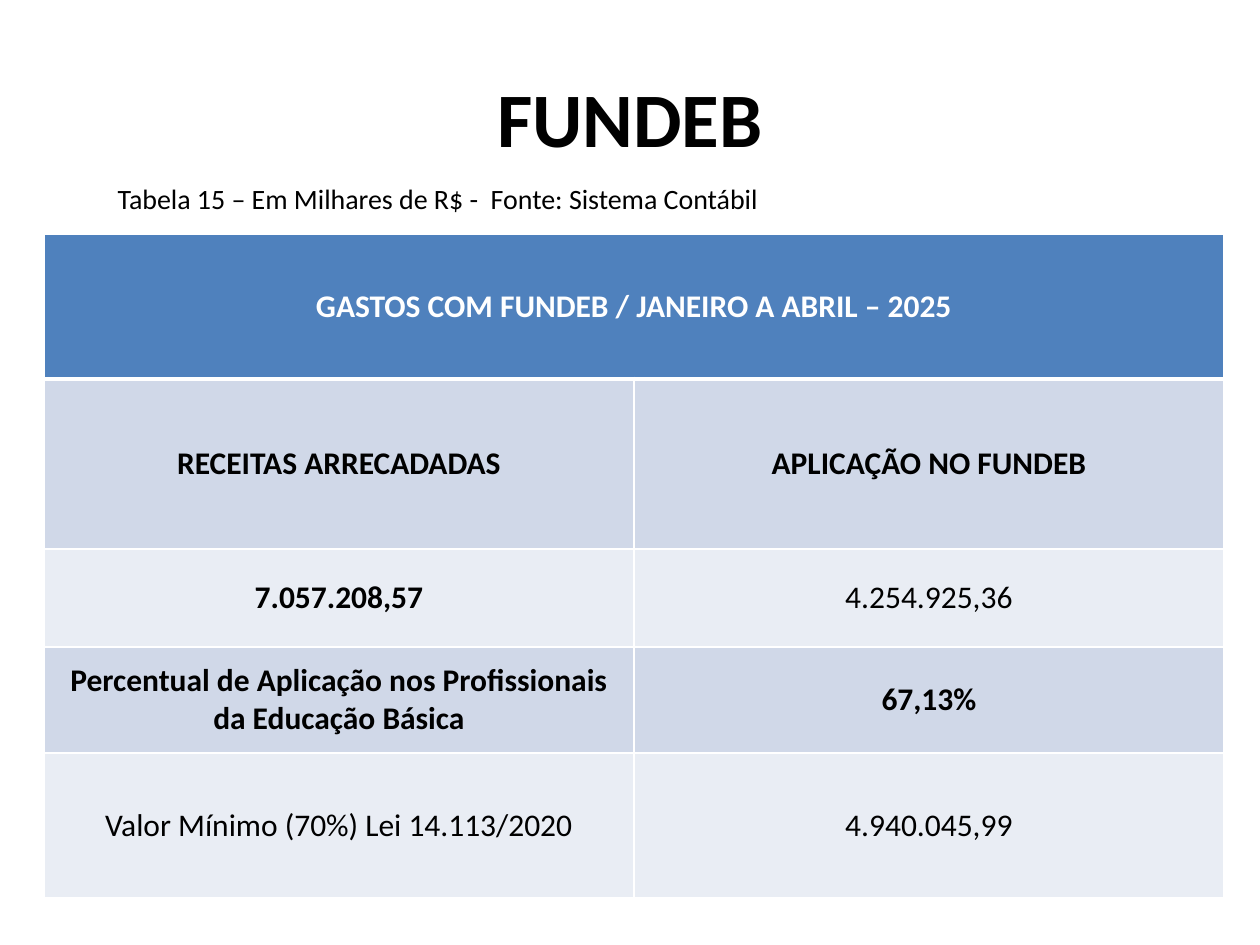
from lxml import etree
from pptx import Presentation
from pptx.dml.color import RGBColor
from pptx.enum.text import MSO_ANCHOR, PP_ALIGN
from pptx.oxml.ns import qn
from pptx.util import Pt

MIDDLE, TOP = MSO_ANCHOR.MIDDLE, MSO_ANCHOR.TOP
CENTER, LEFT = PP_ALIGN.CENTER, PP_ALIGN.LEFT

PX = 914400 / 126
THEME = {
    "font": "Calibri",
    "text": "000000", "header_text": "FFFFFF", "border": "FFFFFF",
    "header": "4F81BD", "bands": ("D0D8E8", "E9EDF4"),
    "title_size": 44, "caption_size": 16, "table_size": 18,
    "thin": 1, "thick": 3,
}


def px(value):
    return round(value * PX)


def write(frame, text, size, color, bold, align, anchor):
    frame.text = text
    frame.vertical_anchor = anchor
    paragraph = frame.paragraphs[0]
    paragraph.alignment = align
    font = paragraph.font
    font.name, font.size, font.bold = THEME["font"], Pt(size), bold
    font.color.rgb = RGBColor.from_string(color)


prs = Presentation()
prs.slide_width, prs.slide_height = px(1260), px(945)
slide = prs.slides.add_slide(prs.slide_layouts[1])

# Title
title = slide.shapes.title
title.left, title.top, title.width, title.height = map(px, (63, 38, 1134, 157))
write(title.text_frame, "FUNDEB", THEME["title_size"], THEME["text"], True, CENTER, MIDDLE)

# Caption with the source, without a bullet
caption = slide.placeholders[1]
caption.left, caption.top, caption.width, caption.height = map(px, (105, 175, 1134, 59))
write(caption.text_frame, "Tabela 15 – Em Milhares de R$ -  Fonte: Sistema Contábil",
      THEME["caption_size"], THEME["text"], False, LEFT, TOP)
caption_format = caption.text_frame.paragraphs[0]._p.get_or_add_pPr()
caption_format.set("marL", str(px(48)))
caption_format.set("indent", str(-px(48)))
caption_format.insert(0, etree.Element(qn("a:buNone")))

# Table: text and bold flag of each cell
rows = [
    [("GASTOS COM FUNDEB / JANEIRO A ABRIL – 2025", True), ("", True)],
    [("RECEITAS ARRECADADAS", True), ("APLICAÇÃO NO FUNDEB", True)],
    [("7.057.208,57", True), ("4.254.925,36", False)],
    [("Percentual de Aplicação nos Profissionais da Educação Básica", True), ("67,13%", True)],
    [("Valor Mínimo (70%) Lei 14.113/2020", False), ("4.940.045,99", False)],
]
row_heights = [145, 170, 98, 106, 145]
column_width = 590
spending = slide.shapes.add_table(
    len(rows), 2, px(44), px(234), px(2 * column_width), px(sum(row_heights))).table
for column in spending.columns:
    column.width = px(column_width)
for row, height in zip(spending.rows, row_heights):
    row.height = px(height)
spending.cell(0, 0).merge(spending.cell(0, 1))

for r, row in enumerate(rows):
    fill = THEME["bands"][(r - 1) % 2] if r else THEME["header"]
    color = THEME["text"] if r else THEME["header_text"]
    for c, (text, bold) in enumerate(row):
        cell = spending.cell(r, c)
        cell.fill.solid()
        cell.fill.fore_color.rgb = RGBColor.from_string(fill)
        if text:
            write(cell.text_frame, text, THEME["table_size"], color, bold, CENTER, MIDDLE)
            cell.vertical_anchor = MIDDLE

        # Cell borders, heavier between header and body
        for position, side in enumerate(("lnL", "lnR", "lnT", "lnB")):
            heavy = (r, side) in ((0, "lnB"), (1, "lnT"))
            width = THEME["thick" if heavy else "thin"]
            line = etree.Element(qn(f"a:{side}"), w=str(Pt(width)))
            solid = etree.SubElement(line, qn("a:solidFill"))
            etree.SubElement(solid, qn("a:srgbClr"), val=THEME["border"])
            cell._tc.get_or_add_tcPr().insert(position, line)

prs.save("out.pptx")
